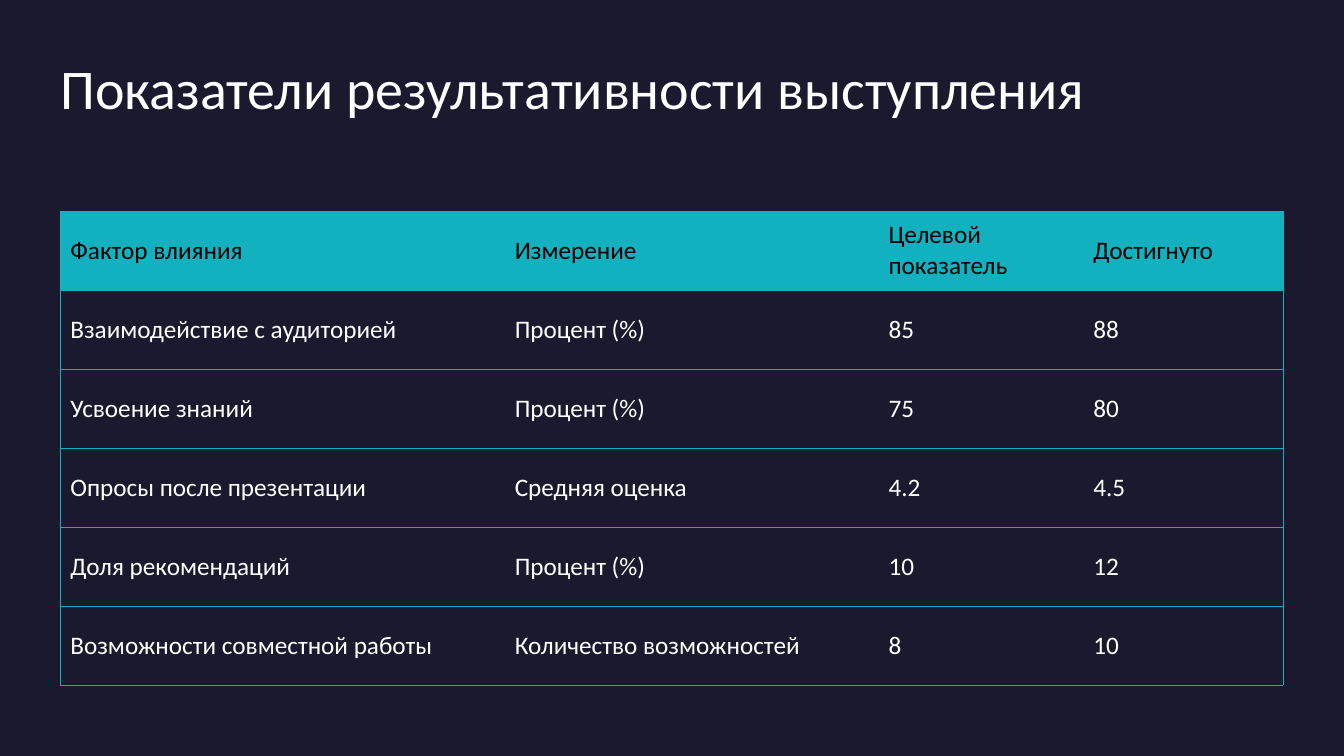
from lxml import etree
from pptx import Presentation
from pptx.dml.color import RGBColor
from pptx.enum.text import MSO_ANCHOR, PP_ALIGN
from pptx.oxml.ns import qn
from pptx.util import Cm, Pt

MIDDLE, TOP = MSO_ANCHOR.MIDDLE, MSO_ANCHOR.TOP
LEFT = PP_ALIGN.LEFT

HEADING = "Показатели результативности выступления"
METRICS = [
    ("Фактор влияния", "Измерение", "Целевой показатель", "Достигнуто"),
    ("Взаимодействие с аудиторией", "Процент (%)", "85", "88"),
    ("Усвоение знаний", "Процент (%)", "75", "80"),
    ("Опросы после презентации", "Средняя оценка", "4.2", "4.5"),
    ("Доля рекомендаций", "Процент (%)", "10", "12"),
    ("Возможности совместной работы", "Количество возможностей", "8", "10"),
]
COLORS = {"background": "1B192E", "accent": "12B1BF", "text": "FFFFFF", "header": "000000"}
FONT = "Calibri"
COLUMN_WIDTHS = [Cm(11.2), Cm(9.42), Cm(5.16), Cm(5.03)]
ROW_HEIGHT = Cm(1.99)
MARGIN, TABLE_TOP = Cm(1.52), Cm(5.32)
CONTENT_WIDTH = sum(COLUMN_WIDTHS)
BORDER_WIDTH = Pt(0.5)


def rgb(name):
    return RGBColor.from_string(COLORS[name])


def style_text(paragraph, size, color):
    paragraph.alignment = LEFT
    paragraph.font.name = FONT
    paragraph.font.size = Pt(size)
    paragraph.font.bold = False
    paragraph.font.color.rgb = rgb(color)


def set_borders(cell, visible_sides):
    """Draw the named sides (L, R, T, B) and clear the others; call before filling."""
    properties = cell._tc.get_or_add_tcPr()
    for side in "LRTB":
        line = etree.SubElement(properties, qn(f"a:ln{side}"), w=str(BORDER_WIDTH))
        if side in visible_sides:
            fill = etree.SubElement(line, qn("a:solidFill"))
            etree.SubElement(fill, qn("a:srgbClr"), val=COLORS["accent"])
        else:
            etree.SubElement(line, qn("a:noFill"))


def add_heading(slide):
    title = slide.shapes.title
    title.left, title.top, title.width, title.height = MARGIN, Cm(1.55), CONTENT_WIDTH, Cm(3.3)
    frame = title.text_frame
    frame.text = HEADING
    frame.word_wrap = True
    frame.vertical_anchor = TOP
    frame.margin_left = frame.margin_right = frame.margin_top = frame.margin_bottom = 0
    frame.paragraphs[0].line_spacing = 0.9
    style_text(frame.paragraphs[0], 40, "text")


def add_metrics(slide):
    last_column = len(COLUMN_WIDTHS) - 1
    table = slide.shapes.add_table(
        len(METRICS), len(COLUMN_WIDTHS), MARGIN, TABLE_TOP,
        CONTENT_WIDTH, ROW_HEIGHT * len(METRICS)).table
    table.horz_banding = False
    for column, width in zip(table.columns, COLUMN_WIDTHS):
        column.width = width
    for r, metric in enumerate(METRICS):
        table.rows[r].height = ROW_HEIGHT
        for c, value in enumerate(metric):
            cell = table.cell(r, c)
            cell.text = value
            cell.vertical_anchor = MIDDLE
            set_borders(cell, "TB" + "L" * (c == 0) + "R" * (c == last_column))
            if r == 0:
                cell.fill.solid()
                cell.fill.fore_color.rgb = rgb("accent")
            else:
                cell.fill.background()
            style_text(cell.text_frame.paragraphs[0], 18, "text" if r else "header")


def main():
    deck = Presentation()
    deck.slide_width, deck.slide_height = Cm(33.87), Cm(19.05)
    slide = deck.slides.add_slide(deck.slide_layouts[5])
    slide.background.fill.solid()
    slide.background.fill.fore_color.rgb = rgb("background")
    add_heading(slide)
    add_metrics(slide)
    deck.save("out.pptx")


if __name__ == "__main__":
    main()
